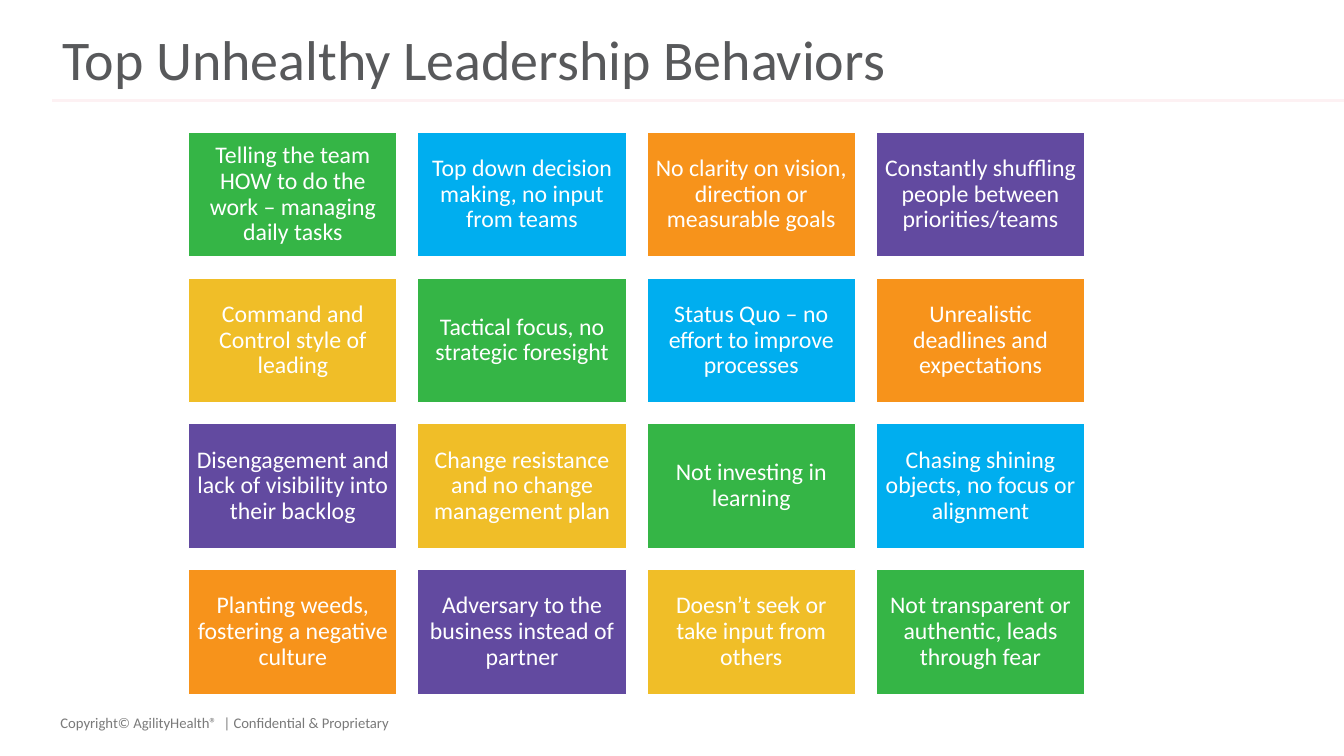
from lxml import etree
from pptx import Presentation
from pptx.dml.color import RGBColor
from pptx.enum.shapes import MSO_CONNECTOR, MSO_SHAPE
from pptx.enum.text import MSO_ANCHOR, PP_ALIGN
from pptx.oxml.ns import qn
from pptx.util import Inches, Pt

WHITE = RGBColor(0xFF, 0xFF, 0xFF)
TITLE_GRAY = RGBColor(0x58, 0x59, 0x5B)
FOOTER_GRAY = RGBColor(0x7A, 0x7A, 0x7A)
RULE_PINK = RGBColor(0xFD, 0xF1, 0xF3)
GREEN = RGBColor(0x35, 0xB5, 0x46)
BLUE = RGBColor(0x00, 0xAE, 0xEF)
ORANGE = RGBColor(0xF7, 0x93, 0x1B)
PURPLE = RGBColor(0x62, 0x4A, 0xA0)
YELLOW = RGBColor(0xF0, 0xBE, 0x28)
CARD_COLORS = [GREEN, BLUE, ORANGE, PURPLE, YELLOW]

FONT = "Calibri"
SLIDE_WIDTH, SLIDE_HEIGHT = 13.33, 7.5

# Card grid, in inches
COLUMNS, ROWS = 4, 4
GRID_LEFT, GRID_TOP = 1.87, 1.31
GRID_WIDTH, GRID_HEIGHT = 8.89, 5.58
CARD_WIDTH, CARD_HEIGHT = 2.07, 1.24
COLUMN_STEP = (GRID_WIDTH - CARD_WIDTH) / (COLUMNS - 1)
ROW_STEP = (GRID_HEIGHT - CARD_HEIGHT) / (ROWS - 1)

BEHAVIORS = [
    "Telling the team HOW to do the work – managing daily tasks",
    "Top down decision making, no input from teams",
    "No clarity on vision, direction or measurable goals",
    "Constantly shuffling people between priorities/teams",
    "Command and Control style of leading",
    "Tactical focus, no strategic foresight",
    "Status Quo – no effort to improve processes",
    "Unrealistic deadlines and expectations",
    "Disengagement and lack of visibility into their backlog",
    "Change resistance and no change management plan",
    "Not investing in learning",
    "Chasing shining objects, no focus or alignment",
    "Planting weeds, fostering a negative culture",
    "Adversary to the business instead of partner",
    "Doesn’t seek or take input from others",
    "Not transparent or authentic, leads through fear",
]


def write_text(shape, text, size, color, inset_x, inset_y,
               anchor=MSO_ANCHOR.MIDDLE, align=PP_ALIGN.LEFT, line_spacing=0.9):
    frame = shape.text_frame
    frame.word_wrap = True
    frame.vertical_anchor = anchor
    frame.margin_left = frame.margin_right = Inches(inset_x)
    frame.margin_top = frame.margin_bottom = Inches(inset_y)
    paragraph = frame.paragraphs[0]
    paragraph.text = text
    paragraph.alignment = align
    paragraph.line_spacing = line_spacing
    paragraph.font.name = FONT
    paragraph.font.size = Pt(size)
    paragraph.font.color.rgb = color


def add_title(slide, text):
    box = slide.shapes.add_textbox(Inches(0.52), Inches(0.27), Inches(12.29), Inches(0.7))
    write_text(box, text, 40, TITLE_GRAY, 0.1, 0.05)


def add_title_rule(slide):
    rule = slide.shapes.add_connector(
        MSO_CONNECTOR.STRAIGHT, Inches(0.52), Inches(1), Inches(SLIDE_WIDTH), Inches(1))
    rule.line.color.rgb = RULE_PINK
    rule.line.width = Pt(2)
    etree.SubElement(rule._element.spPr, qn("a:effectLst"))


def add_footer(slide, text):
    box = slide.shapes.add_textbox(Inches(0.6), Inches(7.08), Inches(4.5), Inches(0.28))
    write_text(box, text, 10.5, FOOTER_GRAY, 0, 0, MSO_ANCHOR.TOP, line_spacing=1.0)


def add_card(slide, index, text):
    """Place a behavior card in reading order, cycling through the colours."""
    row, column = divmod(index, COLUMNS)
    card = slide.shapes.add_shape(
        MSO_SHAPE.RECTANGLE,
        Inches(GRID_LEFT + column * COLUMN_STEP), Inches(GRID_TOP + row * ROW_STEP),
        Inches(CARD_WIDTH), Inches(CARD_HEIGHT))
    card.shadow.inherit = False
    card.fill.solid()
    card.fill.fore_color.rgb = CARD_COLORS[index % len(CARD_COLORS)]
    card.line.color.rgb = WHITE
    card.line.width = Pt(1)
    write_text(card, text, 17, WHITE, 0.07, 0.07, align=PP_ALIGN.CENTER)


def main():
    presentation = Presentation()
    presentation.slide_width = Inches(SLIDE_WIDTH)
    presentation.slide_height = Inches(SLIDE_HEIGHT)
    slide = presentation.slides.add_slide(presentation.slide_layouts[6])
    add_title_rule(slide)
    add_footer(slide, "Copyright© AgilityHealth®  | Confidential & Proprietary")
    add_title(slide, "Top Unhealthy Leadership Behaviors")
    for index, behavior in enumerate(BEHAVIORS):
        add_card(slide, index, behavior)
    presentation.save("out.pptx")


if __name__ == "__main__":
    main()
